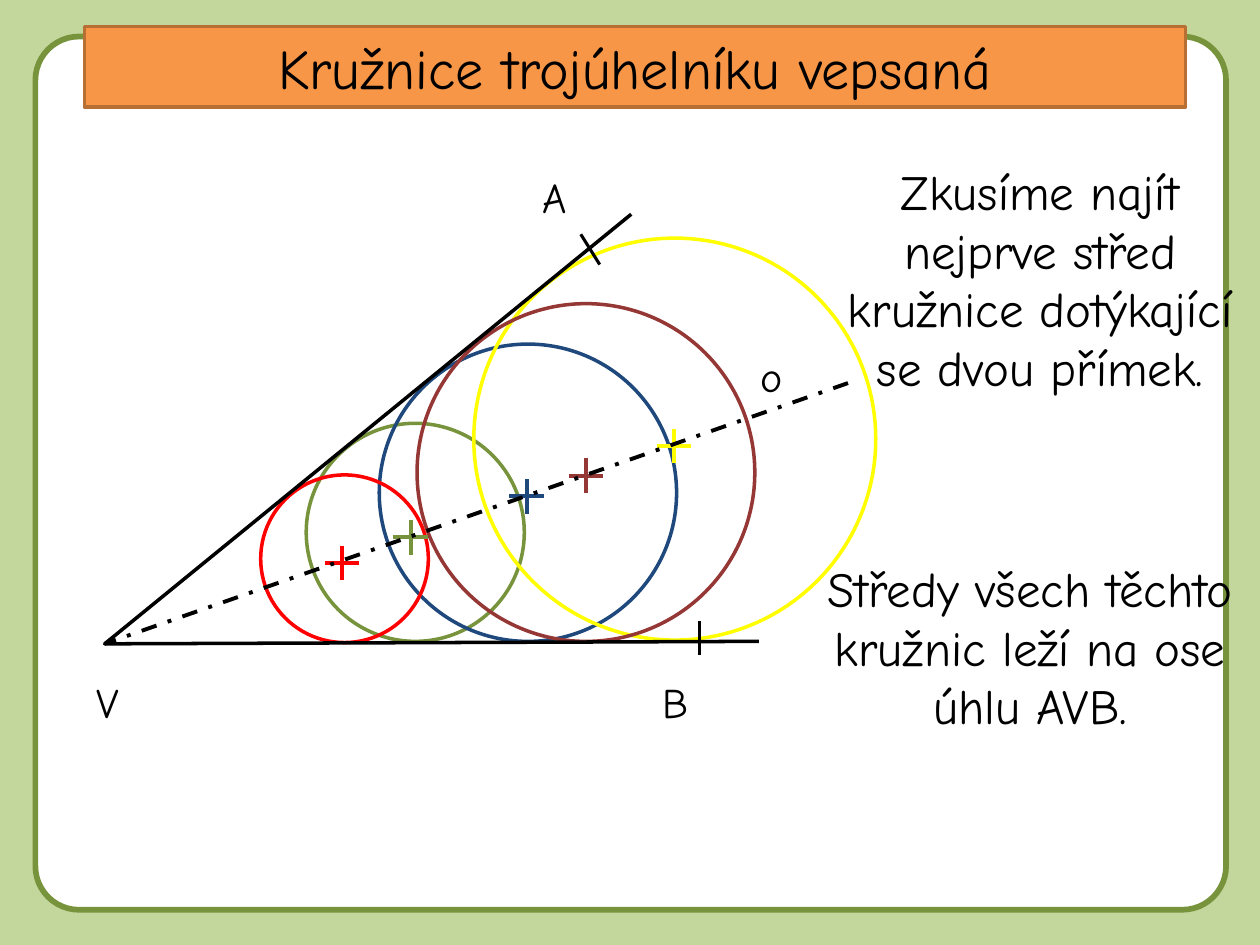
"""Build a slide on circles that touch both arms of an angle."""
import pptx
import pptx.dml.color
import pptx.enum.dml
import pptx.enum.shapes
import pptx.enum.text
import pptx.oxml
import pptx.util

Pt = pptx.util.Pt
SHAPE = pptx.enum.shapes.MSO_SHAPE
ALIGN = pptx.enum.text.PP_ALIGN
ANCHOR = pptx.enum.text.MSO_ANCHOR
DASH = pptx.enum.dml.MSO_LINE

COLORS = {
    "background": "C3D69B", "white": "FFFFFF", "black": "000000",
    "orange": "F79646", "brown": "B76F34", "green": "77933C",
    "blue": "1F497D", "yellow": "FFFF00", "maroon": "953735", "red": "FF0000",
}
FONT = "Comic Neue"
VERTEX = (59.8, 367.9)
CROSS_ARM = 9.9

CIRCLES = [
    ("green", 237.3, 304.2, 124.6),
    ("blue", 301.7, 281.6, 169.9),
    ("yellow", 385.6, 250.9, 229.7),
    ("maroon", 334.8, 270, 193),
    ("red", 196.9, 319.3, 95.8),
]
CROSSES = [
    ("maroon", 334.8, 271.8),
    ("green", 234.7, 307),
    ("red", 195.5, 321.8),
    ("yellow", 385.2, 254.8),
    ("blue", 301, 283.7),
]
LABELS = [
    ("A", 303.1, 94.3),
    ("B", 371.5, 383),
    ("o", 427.7, 196.6),
    ("V", 48.2, 383),
]
NOTES = [
    ("Zkusíme najít nejprve střed kružnice dotýkající se dvou přímek.", 470.9, 88.6, 177.1),
    ("Středy všech těchto kružnic leží na ose úhlu AVB.", 465.1, 315.4, 143.3),
]
TICKS = [((331.9, 133.9), (342.7, 151.2)), ((399.6, 355), (399.6, 374.4))]


def rgb(name):
    """Return the named colour."""
    return pptx.dml.color.RGBColor.from_string(COLORS[name])


def set_line(sp, color, width):
    """Set the colour and width of an outline."""
    sp.line.color.rgb = rgb(color)
    sp.line.width = Pt(width)


def set_text(tf, text, size=24, align=ALIGN.LEFT, anchor=ANCHOR.TOP):
    """Write one formatted paragraph into a text frame."""
    tf.word_wrap = True
    tf.vertical_anchor = anchor
    p = tf.paragraphs[0]
    p.alignment = align
    r = p.add_run()
    r.text = text
    r.font.name = FONT
    r.font.size = Pt(size)
    r.font.color.rgb = rgb("black")


def add_text(s, text, left, top, width, height, **fmt):
    """Add a text box."""
    sp = s.shapes.add_textbox(Pt(left), Pt(top), Pt(width), Pt(height))
    set_text(sp.text_frame, text, **fmt)


def add_shape(s, kind, left, top, width, height, line, line_width, fill=None):
    """Add an outlined preset shape, hollow unless a fill is given."""
    sp = s.shapes.add_shape(kind, Pt(left), Pt(top), Pt(width), Pt(height))
    sp.shadow.inherit = False
    set_line(sp, line, line_width)
    if fill:
        sp.fill.solid()
        sp.fill.fore_color.rgb = rgb(fill)
    else:
        sp.fill.background()
    return sp


def add_line(s, start, end, color="black", width=2.25, dash=None):
    """Add a straight connector without a shadow."""
    sp = s.shapes.add_connector(
        pptx.enum.shapes.MSO_CONNECTOR.STRAIGHT, *(Pt(v) for v in (*start, *end)))
    set_line(sp, color, width)
    if dash:
        sp.line.dash_style = dash
    sp._element.spPr.append(pptx.oxml.parse_xml(
        '<a:effectLst xmlns:a="http://schemas.openxmlformats.org/drawingml/2006/main"/>'))


def add_circle(s, color, x, y, diameter):
    """Add a hollow circle around its centre."""
    add_shape(s, SHAPE.OVAL, x - diameter / 2, y - diameter / 2,
              diameter, diameter, color, 2)


def add_cross(s, color, x, y):
    """Mark a centre with two crossing lines."""
    add_line(s, (x - CROSS_ARM, y), (x + CROSS_ARM, y), color)
    add_line(s, (x, y - CROSS_ARM), (x, y + CROSS_ARM), color)


def add_angle(s, first, vertex, second):
    """Add the two arms of an angle as one open outline."""
    builder = s.shapes.build_freeform(Pt(first[0]), Pt(first[1]))
    builder.add_line_segments([(Pt(x), Pt(y)) for x, y in (vertex, second)], close=False)
    sp = builder.convert_to_shape()
    sp.shadow.inherit = False
    sp.fill.background()
    set_line(sp, "black", 2)


def main():
    """Build and save the slide."""
    prs = pptx.Presentation()
    prs.slide_width, prs.slide_height = Pt(720), Pt(540)
    s = prs.slides.add_slide(prs.slide_layouts[6])
    s.background.fill.solid()
    s.background.fill.fore_color.rgb = rgb("background")

    panel = add_shape(s, SHAPE.ROUNDED_RECTANGLE, 20.2, 20.9, 680.4, 499,
                      "green", 3.25, "white")
    panel.adjustments[0] = 0.05
    title = add_shape(s, SHAPE.RECTANGLE, 48.2, 15.1, 629.3, 46.1, "brown", 2, "orange")
    set_text(title.text_frame, "Kružnice trojúhelníku vepsaná", size=32,
             align=ALIGN.CENTER, anchor=ANCHOR.MIDDLE)

    for text, left, top, height in NOTES:
        add_text(s, text, left, top, 247, height, size=28, align=ALIGN.CENTER)
    for circle in CIRCLES:
        add_circle(s, *circle)
    for cross in CROSSES:
        add_cross(s, *cross)
    add_line(s, (484.6, 218.9), VERTEX, dash=DASH.DASH_DOT)
    add_angle(s, (360.7, 122.4), VERTEX, (433.6, 366.5))
    for text, left, top in LABELS:
        add_text(s, text, left, top, 36, 36)
    for start, end in TICKS:
        add_line(s, start, end, width=1.75)
    prs.save("out.pptx")


if __name__ == "__main__":
    main()
